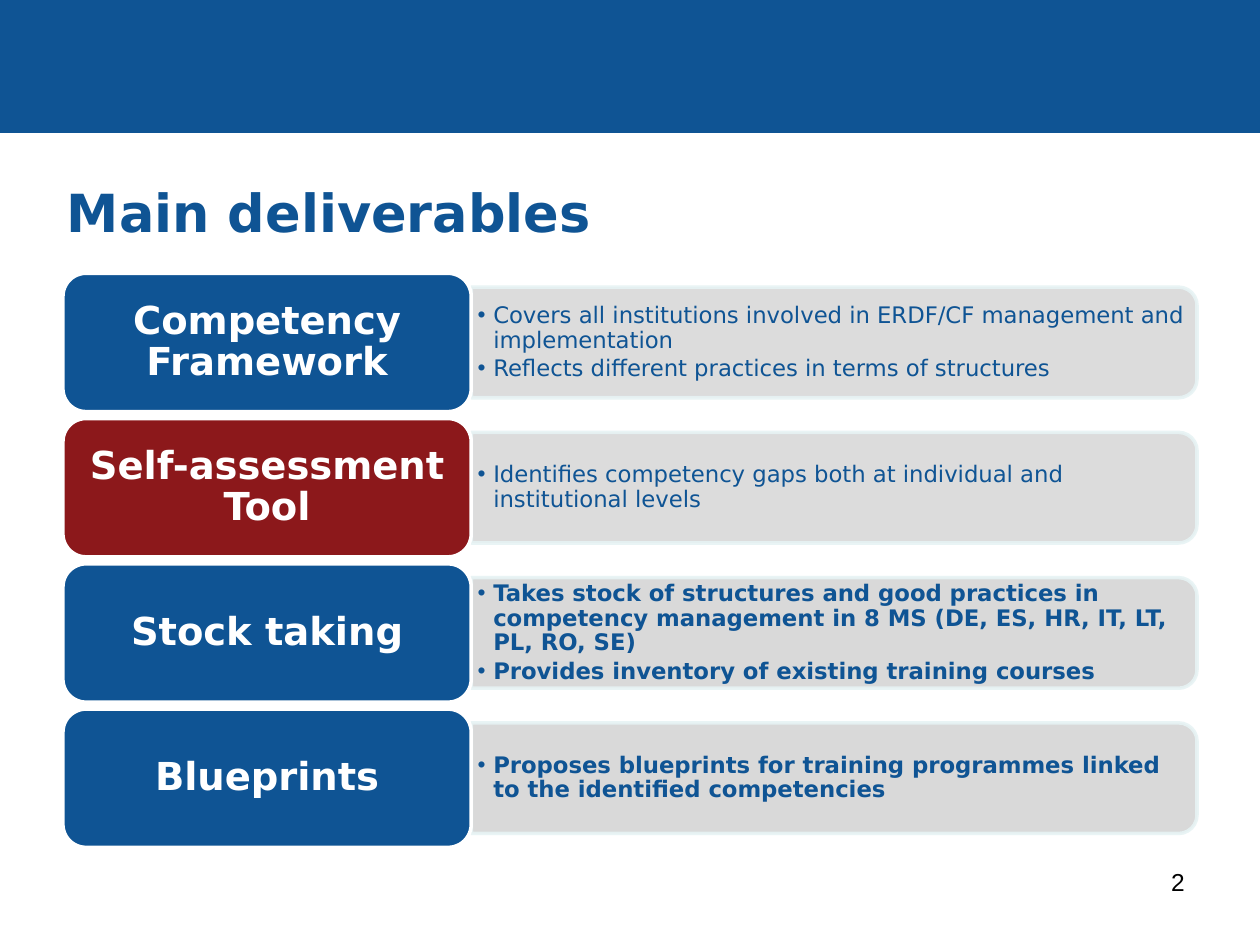
from pptx import Presentation
from pptx.dml.color import RGBColor
from pptx.enum.shapes import MSO_SHAPE
from pptx.enum.text import MSO_ANCHOR, PP_ALIGN
from pptx.oxml.ns import qn
from pptx.util import Pt
from lxml import etree

RECTANGLE = MSO_SHAPE.RECTANGLE
ROUNDED = MSO_SHAPE.ROUNDED_RECTANGLE
ROUNDED_END = MSO_SHAPE.ROUND_2_SAME_RECTANGLE
TOP, MIDDLE = MSO_ANCHOR.TOP, MSO_ANCHOR.MIDDLE
LEFT, CENTER, RIGHT = PP_ALIGN.LEFT, PP_ALIGN.CENTER, PP_ALIGN.RIGHT

BLUE = RGBColor(0x0F, 0x54, 0x94)
RED = RGBColor(0x8C, 0x18, 0x1B)
GREY = RGBColor(0xD9, 0xD9, 0xD9)
PALE = RGBColor(0xE7, 0xF3, 0xF4)
WHITE = RGBColor(0xFF, 0xFF, 0xFF)
BLACK = RGBColor(0, 0, 0)

TITLE = "Main deliverables"
PAGE_NUMBER = "2"
DELIVERABLES = [
    {"label": "Competency Framework", "color": BLUE, "bold": False, "opacity": 90, "points": [
        "Covers all institutions involved in ERDF/CF management and implementation",
        "Reflects different practices in terms of structures"]},
    {"label": "Self-assessment Tool", "color": RED, "bold": False, "opacity": 90, "points": [
        "Identifies competency gaps both at individual and institutional levels"]},
    {"label": "Stock taking", "color": BLUE, "bold": True, "opacity": 100, "points": [
        "Takes stock of structures and good practices in competency management "
        "in 8 MS (DE, ES, HR, IT, LT, PL, RO, SE)",
        "Provides inventory of existing training courses"]},
    {"label": "Blueprints", "color": BLUE, "bold": True, "opacity": 100, "points": [
        "Proposes blueprints for training programmes linked to the identified competencies"]},
]

ROWS_LEFT, ROWS_TOP, ROW_STEP = 36, 156.2, 83
LABEL_WIDTH, LABEL_HEIGHT = 233.3, 79
PANEL_LEFT = ROWS_LEFT + LABEL_WIDTH
PANEL_WIDTH, PANEL_HEIGHT = 414.7, 63.2
POINTS_WIDTH, POINTS_HEIGHT = 411.6, 57
BULLET_INDENT = 9

TITLE_FORMAT = {"name": "DejaVu Sans", "size": Pt(30), "bold": True}
LABEL_FORMAT = {"name": "DejaVu Sans", "size": Pt(22), "bold": True}
POINT_FORMAT = {"name": "DejaVu Sans", "size": Pt(13)}
NUMBER_FORMAT = {"name": "Arial", "size": Pt(14)}


def add_box(page, kind, place, fill, line, line_width):
    box = page.shapes.add_shape(kind, *map(Pt, place))
    box.shadow.inherit = False
    box.fill.solid()
    box.fill.fore_color.rgb = fill
    box.line.color.rgb = line
    box.line.width = Pt(line_width)
    return box


def set_opacity(color_format_parent, percent):
    for color in color_format_parent.iter(qn("a:srgbClr")):
        etree.SubElement(color, qn("a:alpha"), val=str(percent * 1000))


def add_bullet(para):
    properties = para._p.get_or_add_pPr()
    properties.set("marL", str(Pt(BULLET_INDENT)))
    properties.set("indent", str(-Pt(BULLET_INDENT)))
    etree.SubElement(properties, qn("a:buFont"), typeface="Arial")
    etree.SubElement(properties, qn("a:buChar"), char="•")


def write(box, texts, text_format, color, align, anchor=MIDDLE,
          insets=(7.2, 3.6), spacing=None, gap=0, bullets=False):
    frame = box.text_frame
    frame.word_wrap = True
    frame.vertical_anchor = anchor
    frame.margin_left = frame.margin_right = Pt(insets[0])
    frame.margin_top = frame.margin_bottom = Pt(insets[1])
    for index, text in enumerate(texts):
        para = frame.add_paragraph() if index else frame.paragraphs[0]
        para.alignment = align
        if spacing:
            para.line_spacing = spacing
        para.space_after = Pt(gap)
        if bullets:
            add_bullet(para)
        span = para.add_run()
        span.text = text
        for name, value in text_format.items():
            setattr(span.font, name, value)
        span.font.color.rgb = color


def add_row(page, index, item):
    top = ROWS_TOP + index * ROW_STEP
    middle = top + LABEL_HEIGHT / 2
    panel_center = PANEL_LEFT + PANEL_WIDTH / 2
    panel = add_box(page, ROUNDED_END,
                    (panel_center - PANEL_HEIGHT / 2, middle - PANEL_WIDTH / 2,
                     PANEL_HEIGHT, PANEL_WIDTH), GREY, PALE, 2)
    panel.rotation = 90
    if item["opacity"] < 100:
        set_opacity(panel._element.spPr.find(qn("a:solidFill")), item["opacity"])
    set_opacity(panel.line._ln, 90)

    points = page.shapes.add_textbox(Pt(PANEL_LEFT), Pt(middle - POINTS_HEIGHT / 2),
                                     Pt(POINTS_WIDTH), Pt(POINTS_HEIGHT))
    write(points, item["points"], {**POINT_FORMAT, "bold": item["bold"]}, BLUE, LEFT,
          insets=(3.6, 1.8), spacing=0.9, gap=2, bullets=True)

    label = add_box(page, ROUNDED, (ROWS_LEFT, top, LABEL_WIDTH, LABEL_HEIGHT),
                    item["color"], WHITE, 2)
    write(label, [item["label"]], LABEL_FORMAT, WHITE, CENTER,
          insets=(10.4, 7.5), spacing=0.9)


def main():
    deck = Presentation()
    deck.slide_width, deck.slide_height = Pt(720), Pt(540)
    page = deck.slides.add_slide(deck.slide_layouts[5])
    add_box(page, RECTANGLE, (0, 0, 720, 75.6), BLUE, BLUE, 0.75)

    title = page.shapes.title
    title.left, title.top, title.width, title.height = map(Pt, (31, 84.2, 648, 73.4))
    write(title, [TITLE], TITLE_FORMAT, BLUE, LEFT)

    for index, item in enumerate(DELIVERABLES):
        add_row(page, index, item)

    number = page.shapes.add_textbox(*map(Pt, (516, 491.8, 168, 37.4)))
    write(number, [PAGE_NUMBER], NUMBER_FORMAT, BLACK, RIGHT, anchor=TOP)
    deck.save("out.pptx")


if __name__ == "__main__":
    main()
